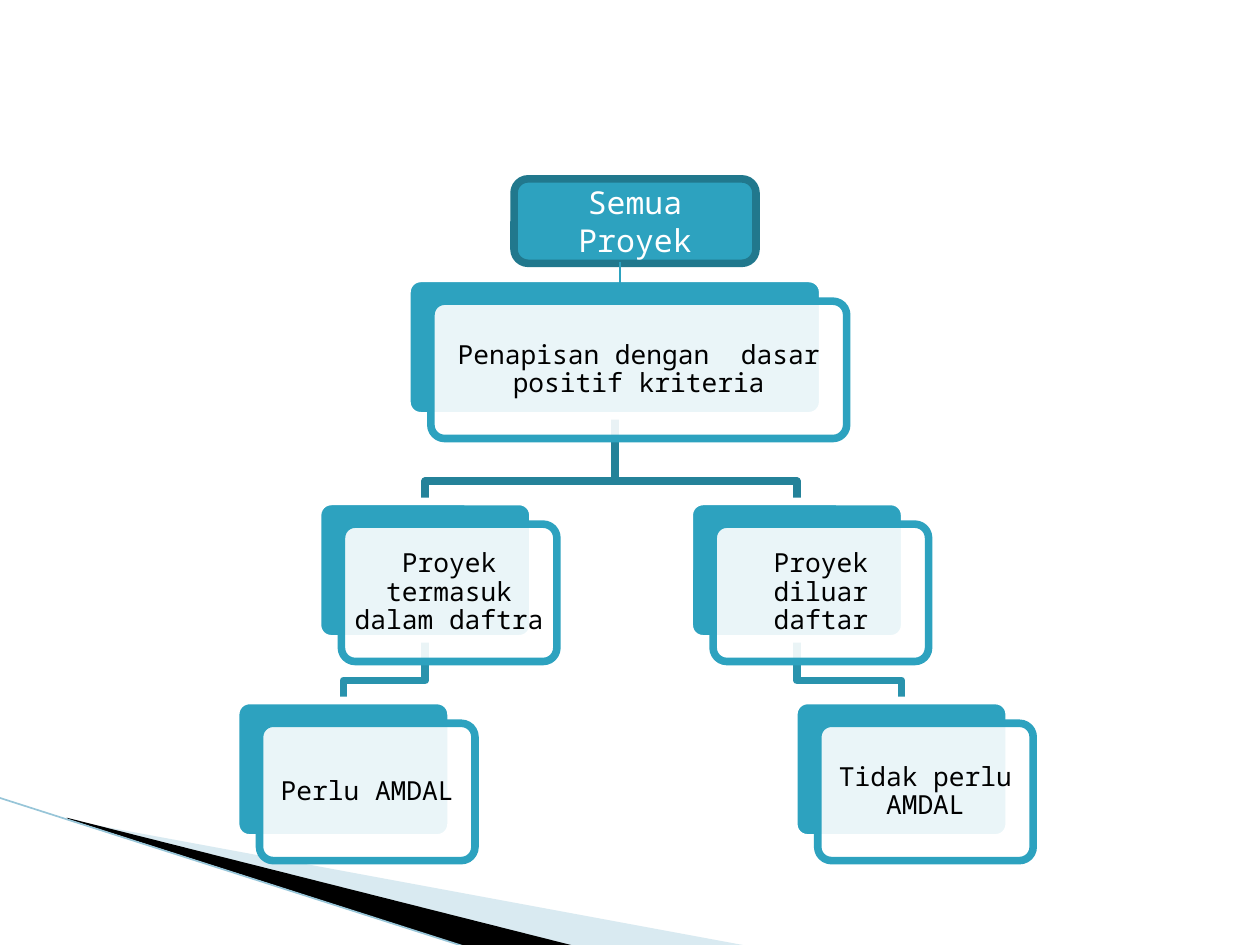
from collections import namedtuple

from lxml.etree import SubElement
from pptx import Presentation
from pptx.dml.color import RGBColor
from pptx.enum.shapes import MSO_CONNECTOR, MSO_SHAPE
from pptx.enum.text import MSO_ANCHOR, PP_ALIGN
from pptx.oxml.ns import qn
from pptx.util import Inches, Pt

FONT = "Noto Sans Mono"
TEAL = "2DA2BF"
WHITE = "FFFFFF"
BLACK = "000000"
BORDER = 4.33
CARD_HEIGHT = 1.09
CARD_OFFSET_X, CARD_OFFSET_Y = 0.19, 0.18
BEND_ABOVE_CHILD = 0.16

Card = namedtuple("Card", "text left top width")


def color(hex_string):
    return RGBColor.from_string(hex_string)


def set_fill(shape, hex_string, opacity=100):
    shape.fill.solid()
    shape.fill.fore_color.rgb = color(hex_string)
    if opacity < 100:
        color_element = shape.fill._xPr.find(qn("a:solidFill"))[0]
        SubElement(color_element, qn("a:alpha"), val=str(opacity * 1000))


def set_line(shape, hex_string, width):
    shape.line.color.rgb = color(hex_string)
    shape.line.width = Pt(width)


def add_outline(slide, points, close):
    points = [(Inches(x), Inches(y)) for x, y in points]
    builder = slide.shapes.build_freeform(*points[0])
    builder.add_line_segments(points[1:], close=close)
    shape = builder.convert_to_shape()
    shape.shadow.inherit = False
    return shape


def add_wedge(slide, points, hex_string, opacity=100):
    wedge = add_outline(slide, points, close=True)
    set_fill(wedge, hex_string, opacity)
    wedge.line.fill.background()


def add_straight_line(slide, start, end, hex_string, width, arrow=False):
    ends = [Inches(value) for value in (*start, *end)]
    line = slide.shapes.add_connector(MSO_CONNECTOR.STRAIGHT, *ends)
    set_line(line, hex_string, width)
    if arrow:
        SubElement(line.line._get_or_add_ln(), qn("a:tailEnd"), type="arrow")
    SubElement(line._element.spPr, qn("a:effectLst"))


def add_branch(slide, parent, child, hex_string):
    """Draw the bent line from the bottom of one card to the top of another."""
    parent_x = parent.left + parent.width / 2
    child_x = child.left + child.width / 2
    bend_y = child.top - BEND_ABOVE_CHILD
    points = [(parent_x, parent.top + CARD_HEIGHT), (parent_x, bend_y),
              (child_x, bend_y), (child_x, child.top)]
    branch = add_outline(slide, points, close=False)
    branch.fill.background()
    set_line(branch, hex_string, BORDER)


def add_rounded_box(slide, left, top, width, height, line_color):
    box = slide.shapes.add_shape(
        MSO_SHAPE.ROUNDED_RECTANGLE,
        Inches(left), Inches(top), Inches(width), Inches(height))
    box.shadow.inherit = False
    set_line(box, line_color, BORDER)
    return box


def add_label(shape, text, size, hex_string):
    frame = shape.text_frame
    frame.word_wrap = True
    frame.vertical_anchor = MSO_ANCHOR.MIDDLE
    paragraph = frame.paragraphs[0]
    paragraph.alignment = PP_ALIGN.CENTER
    run = paragraph.add_run()
    run.text = text
    run.font.name = FONT
    run.font.size = Pt(size)
    run.font.color.rgb = color(hex_string)


def add_card(slide, card):
    """Draw a solid back plate and, shifted from it, a translucent front with text."""
    back = add_rounded_box(slide, card.left, card.top, card.width, CARD_HEIGHT, WHITE)
    set_fill(back, TEAL)
    front = add_rounded_box(slide, card.left + CARD_OFFSET_X, card.top + CARD_OFFSET_Y,
                            card.width, CARD_HEIGHT, TEAL)
    set_fill(front, WHITE, 90)
    for box in (back, front):
        box.adjustments[0] = 0.1
    add_label(front, card.text, 15, BLACK)
    frame = front.text_frame
    frame.paragraphs[0].line_spacing = 0.9
    frame.margin_left = frame.margin_right = Inches(0.06)
    frame.margin_top = frame.margin_bottom = Inches(0.06)


def add_corner_decoration(slide):
    add_wedge(slide, [(0.55, 6.51), (5.95, 7.51), (4.56, 7.51), (0.55, 6.5)], "A0CBDC", 40)
    add_wedge(slide, [(0.53, 6.49), (4.57, 7.51), (3.72, 7.52), (0.54, 6.5)], BLACK)
    add_straight_line(slide, (-0.01, 6.33), (3.71, 7.52), "97C5D8", 0.95)


def main():
    presentation = Presentation()
    presentation.slide_width = Inches(10)
    presentation.slide_height = Inches(7.5)
    slide = presentation.slides.add_slide(presentation.slide_layouts[6])
    add_corner_decoration(slide)

    screening = Card("Penapisan dengan  dasar positif kriteria", 3.23, 2.21, 3.3)
    listed = Card("Proyek termasuk dalam daftra", 2.52, 3.98, 1.71)
    required = Card("Perlu AMDAL", 1.87, 5.56, 1.71)
    unlisted = Card("Proyek diluar daftar", 5.47, 3.98, 1.71)
    not_required = Card("Tidak perlu AMDAL", 6.3, 5.56, 1.71)

    add_branch(slide, unlisted, not_required, "2993AD")
    add_branch(slide, screening, unlisted, "248299")
    add_branch(slide, listed, required, "2993AD")
    add_branch(slide, screening, listed, "248299")
    for card in (screening, listed, required, unlisted, not_required):
        add_card(slide, card)

    all_projects = add_rounded_box(slide, 4.08, 1.42, 1.92, 0.67, "21788D")
    set_fill(all_projects, TEAL)
    add_label(all_projects, "Semua Proyek", 18, WHITE)
    add_straight_line(slide, (4.92, 2.08), (4.92, 2.42), TEAL, 0.75, arrow=True)

    presentation.save("out.pptx")


if __name__ == "__main__":
    main()
